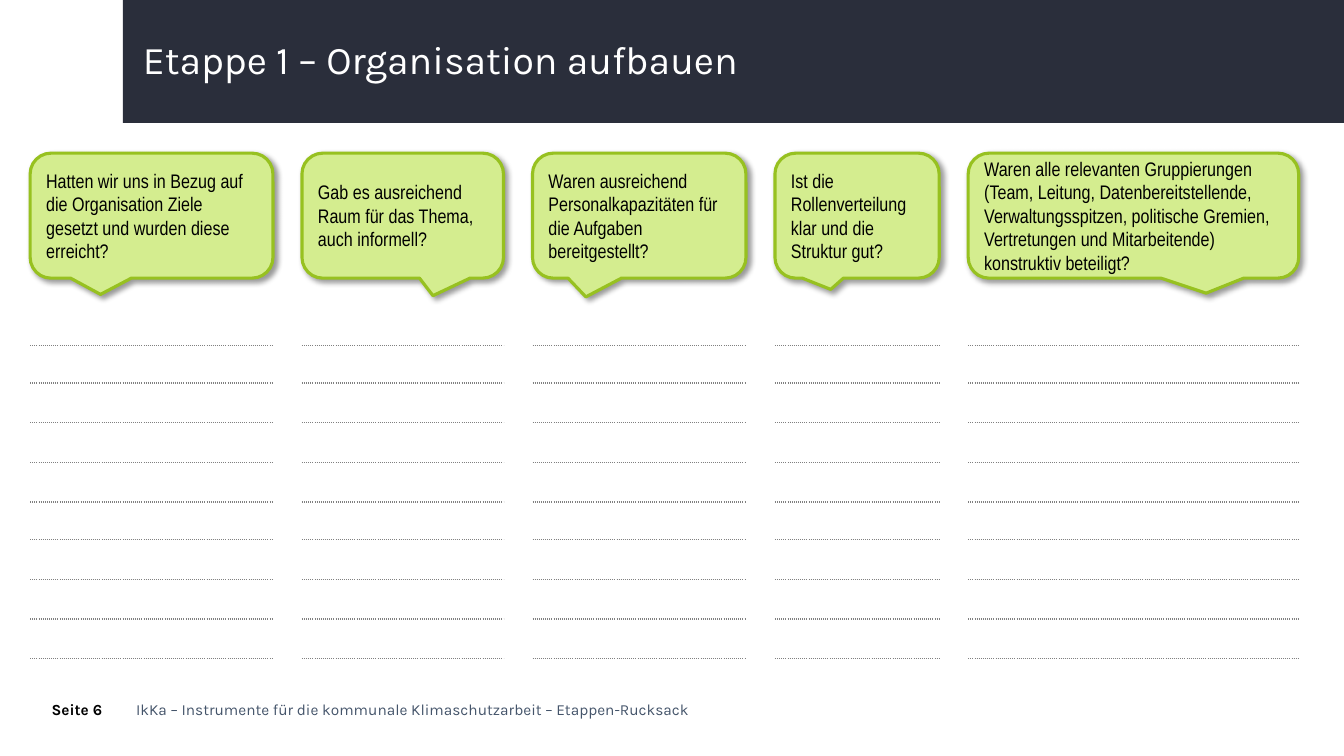
from pptx import Presentation
from pptx.dml.color import RGBColor
from pptx.enum.shapes import MSO_SHAPE
from pptx.enum.text import MSO_ANCHOR
from pptx.oxml import parse_xml
from pptx.oxml.ns import nsdecls
from pptx.util import Cm, Pt

NAVY = "2A2E3B"
LIME = "D4ED8F"
GREEN = "97C120"
GREY = "808080"
SLATE = "44546A"
WHITE = "FFFFFF"
BLACK = "000000"

MARGIN = 0.76
GAP = 0.73
CALLOUT_TOP = 3.86
CALLOUT_HEIGHT = 3.15
LINES_TOP = 7.77
LINE_ROWS = [0.94, 0.94, 1, 1, 1, 0.95, 1, 1, 1]

QUESTIONS = [
    (6.12, (-0.21, 0.63),
     "Hatten wir uns in Bezug auf die Organisation Ziele gesetzt und wurden diese erreicht?"),
    (5.08, (0.15, 0.64),
     "Gab es ausreichend Raum für das Thema, auch informell?"),
    (5.38, (-0.25, 0.65),
     "Waren ausreichend Personalkapazitäten für die Aufgaben bereitgestellt?"),
    (4.14, (-0.16, 0.59),
     "Ist die Rollenverteilung klar und die Struktur gut?"),
    (8.33, (0.22, 0.62),
     "Waren alle relevanten Gruppierungen (Team, Leitung, Datenbereitstellende, "
     "Verwaltungsspitzen, politische Gremien, Vertretungen und Mitarbeitende) "
     "konstruktiv beteiligt?"),
]


def color(value):
    return RGBColor.from_string(value)


def write(frame, text, font="Karla", size=11, fill=BLACK, bold=False,
          spacing=None, inset=None, anchor=MSO_ANCHOR.TOP):
    frame.word_wrap = True
    frame.vertical_anchor = anchor
    if inset is not None:
        frame.margin_left = frame.margin_right = Cm(inset)
        frame.margin_top = frame.margin_bottom = Cm(inset)
    para = frame.paragraphs[0]
    if spacing:
        para.line_spacing = spacing
    span = para.add_run()
    span.text = text
    span.font.name = font
    span.font.size = Pt(size)
    span.font.bold = bold
    span.font.color.rgb = color(fill)


def add_label(page, left, top, width, height, text, **style):
    box = page.shapes.add_textbox(Cm(left), Cm(top), Cm(width), Cm(height))
    write(box.text_frame, text, **style)


def add_header(page, left, width, height):
    band = page.shapes.add_shape(
        MSO_SHAPE.RECTANGLE, Cm(left), 0, Cm(width), Cm(height))
    band.shadow.inherit = False
    band.fill.solid()
    band.fill.fore_color.rgb = color(NAVY)
    band.line.fill.background()
    add_label(page, left + 0.25, 0.89, width - 1.5, 1.55,
              "Etappe 1 – Organisation aufbauen",
              size=28, fill=WHITE, spacing=0.9)


def add_callout(page, left, top, width, height, tip, text):
    bubble = page.shapes.add_shape(
        MSO_SHAPE.ROUNDED_RECTANGULAR_CALLOUT,
        Cm(left), Cm(top), Cm(width), Cm(height))
    bubble.adjustments[0], bubble.adjustments[1] = tip
    bubble.fill.solid()
    bubble.fill.fore_color.rgb = color(LIME)
    bubble.line.color.rgb = color(GREEN)
    bubble.line.width = Pt(2.25)
    bubble.shadow.inherit = False
    effects = bubble.element.spPr.find(
        "{http://schemas.openxmlformats.org/drawingml/2006/main}effectLst")
    effects.append(parse_xml(
        f'<a:outerShdw {nsdecls("a")} blurRad="{Pt(4)}" dist="{Pt(3)}" '
        'dir="2700000" algn="tl" rotWithShape="0">'
        f'<a:srgbClr val="{BLACK}"><a:alpha val="40000"/></a:srgbClr></a:outerShdw>'))
    write(bubble.text_frame, text, font="Arial Narrow", size=14,
          anchor=MSO_ANCHOR.MIDDLE)
    bubble.text_frame.paragraphs[0].alignment = 1


def set_borders(cell, dotted):
    for position, side in enumerate(("lnL", "lnR", "lnT", "lnB")):
        if side in dotted:
            content = (f'<a:solidFill><a:srgbClr val="{GREY}"/></a:solidFill>'
                       '<a:prstDash val="sysDot"/>')
        else:
            content = "<a:noFill/>"
        border = parse_xml(
            f'<a:{side} {nsdecls("a")} w="{Pt(1)}">{content}</a:{side}>')
        cell._tc.get_or_add_tcPr().insert(position, border)


def add_writing_lines(page, left, top, width, heights):
    table = page.shapes.add_table(
        len(heights), 1, Cm(left), Cm(top), Cm(width), Cm(sum(heights))).table
    table.first_row = False
    table.horz_banding = False
    for index, height in enumerate(heights):
        table.rows[index].height = Cm(height)
        cell = table.cell(index, 0)
        cell.margin_top = cell.margin_bottom = 0
        cell.fill.background()
        set_borders(cell, ("lnT", "lnB") if index else ("lnB",))


def add_questions(page, left, gap):
    for width, tip, text in QUESTIONS:
        add_callout(page, left, CALLOUT_TOP, width, CALLOUT_HEIGHT, tip, text)
        add_writing_lines(page, left, LINES_TOP, width, LINE_ROWS)
        left += width + gap


def add_footer(page, left, top):
    add_label(page, left, top, 1.85, 0.6, "Seite 6", bold=True, inset=0)
    add_label(page, left + 2.13, top, 14.15, 0.48,
              "IkKa – Instrumente für die kommunale Klimaschutzarbeit – Etappen-Rucksack",
              fill=SLATE, inset=0)


def main():
    deck = Presentation()
    deck.slide_width = Cm(33.87)
    deck.slide_height = Cm(19.05)
    page = deck.slides.add_slide(deck.slide_layouts[6])
    add_header(page, 3.1, 30.77, 3.1)
    add_questions(page, MARGIN, GAP)
    add_footer(page, 1.3, 17.65)
    deck.save("out.pptx")


if __name__ == "__main__":
    main()
